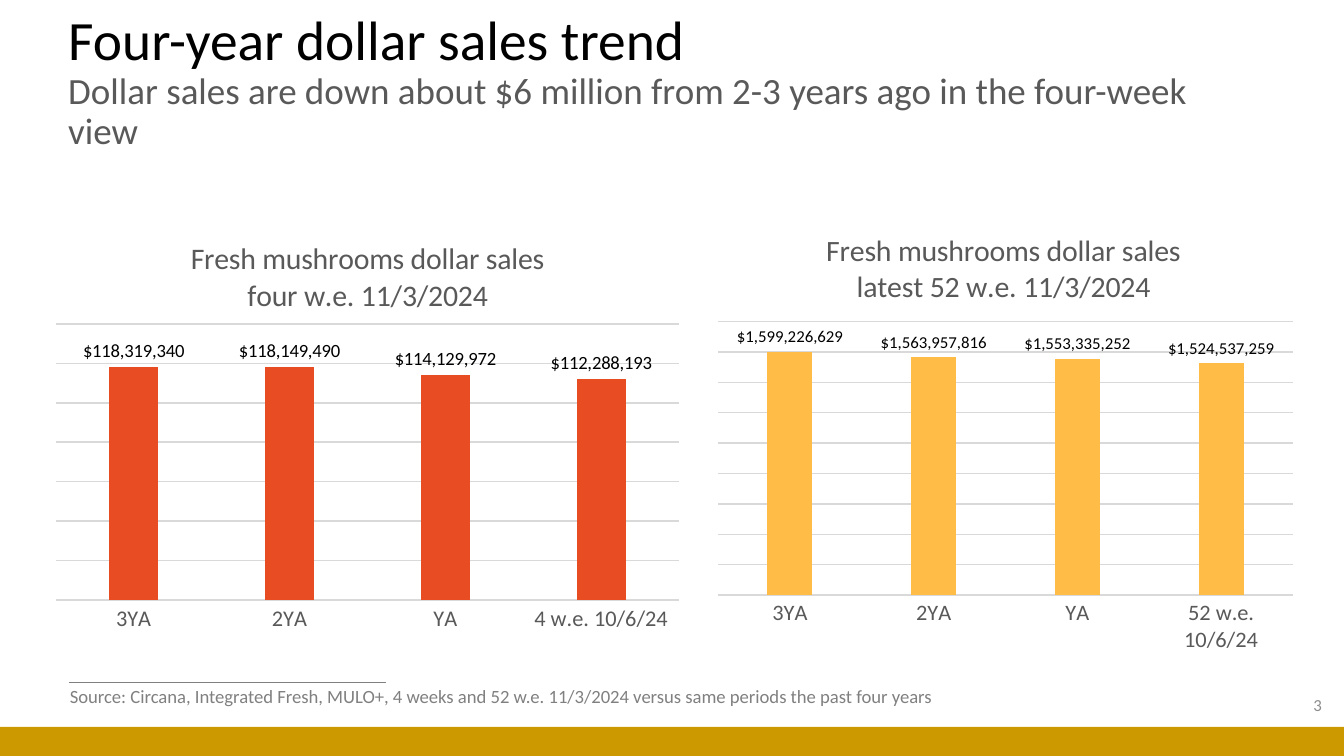
"""Build the four-year mushroom dollar sales slide."""
from dataclasses import dataclass

from lxml import etree
from pptx import Presentation
from pptx import util as u
from pptx.chart.data import CategoryChartData
from pptx.dml.color import RGBColor
from pptx.enum import chart as ch
from pptx.enum import shapes, text
from pptx.oxml.ns import qn


@dataclass(frozen=True)
class Theme:
    """Colours, type sizes and font of the slide."""
    font: str = "Calibri"
    black: str = "000000"
    dark: str = "595959"
    grey: str = "808080"
    light: str = "8C8C8C"
    grid: str = "D9D9D9"
    gold: str = "CC9900"
    red: str = "E84C22"
    amber: str = "FFBD47"
    heading: float = 29.7
    subheading: float = 19.8
    chart_title: float = 16
    axis: float = 12
    body: float = 10
    small: float = 9


class SlideBuilder:
    """Hold the style and the current slide, and add its elements."""

    def __init__(self, page, theme):
        self.page = page
        self.theme = theme

    def style(self, font, size, colour):
        for name, value in {"name": self.theme.font, "size": u.Pt(size), "bold": False}.items():
            setattr(font, name, value)
        font.color.rgb = RGBColor.from_string(colour)

    def stroke(self, line, colour, width):
        line.color.rgb = RGBColor.from_string(colour)
        line.width = u.Pt(width)

    def band(self, left, top, width, height, colour):
        band = self.page.shapes.add_shape(
            shapes.MSO_SHAPE.RECTANGLE, u.Cm(left), u.Cm(top), u.Cm(width), u.Cm(height))
        band.shadow.inherit = False
        band.fill.solid()
        band.fill.fore_color.rgb = RGBColor.from_string(colour)
        band.line.fill.background()

    def rule(self, left, right, top, colour, width):
        rule = self.page.shapes.add_connector(
            shapes.MSO_CONNECTOR.STRAIGHT, u.Cm(left), u.Cm(top), u.Cm(right), u.Cm(top))
        self.stroke(rule.line, colour, width)
        etree.SubElement(rule._element.spPr, qn("a:effectLst"))

    def label(self, left, top, width, height, lines, frame_format, para_format):
        box = self.page.shapes.add_textbox(u.Cm(left), u.Cm(top), u.Cm(width), u.Cm(height))
        para = box.text_frame.paragraphs[0]
        for target, values in ((box.text_frame, frame_format), (para, para_format)):
            for name, value in values.items():
                setattr(target, name, value)
        self.fill_lines(para, lines)

    def fill_lines(self, para, lines):
        for index, (words, size, colour) in enumerate(lines):
            if index:
                para.add_line_break()
            span = para.add_run()
            span.text = words
            self.style(span.font, size, colour)

    def place(self, parent, position, **values):
        for layout in parent.findall(qn("c:layout")):
            parent.remove(layout)
        layout = etree.Element(qn("c:layout"))
        manual = etree.SubElement(layout, qn("c:manualLayout"))
        for name, value in values.items():
            etree.SubElement(manual, qn(f"c:{name}"), val=str(value))
        parent.insert(position, layout)

    def columns(self, area, title, title_at, plot_at, categories, values, scale, colour, label_size):
        theme = self.theme
        data = CategoryChartData(number_format=r"\$#,##0")
        data.categories = categories
        data.add_series("Series 1", values)
        chart = self.page.shapes.add_chart(
            ch.XL_CHART_TYPE.COLUMN_CLUSTERED, *map(u.Cm, area), data).chart
        chart.has_legend = False
        self.style(chart.font, theme.body, theme.black)

        heading = chart.chart_title
        self.fill_lines(heading.text_frame.paragraphs[0],
                        [(words, theme.chart_title, theme.dark) for words in title])
        self.place(heading._element, 1, xMode="edge", yMode="edge", x=title_at[0], y=title_at[1])
        self.place(chart._chartSpace.chart.plotArea, 0, layoutTarget="inner",
                   xMode="edge", yMode="edge", **dict(zip("xywh", plot_at)))

        axis = chart.category_axis
        axis.major_tick_mark = ch.XL_TICK_MARK.NONE
        self.style(axis.tick_labels.font, theme.axis, theme.dark)
        self.stroke(axis.format.line, theme.grid, 0.75)

        top, step = scale
        axis_format = {"minimum_scale": 0, "maximum_scale": top, "major_unit": step,
                       "has_major_gridlines": True, "visible": False}
        for name, value in axis_format.items():
            setattr(chart.value_axis, name, value)
        self.stroke(chart.value_axis.major_gridlines.format.line, theme.grid, 0.75)

        plot = chart.plots[0]
        plot_format = {"gap_width": 219, "overlap": -27,
                       "vary_by_categories": False, "has_data_labels": True}
        for name, value in plot_format.items():
            setattr(plot, name, value)
        label_format = {"show_value": True, "position": ch.XL_LABEL_POSITION.OUTSIDE_END,
                        "number_format": r"\$#,##0", "number_format_is_linked": False}
        for name, value in label_format.items():
            setattr(plot.data_labels, name, value)
        self.style(plot.data_labels.font, label_size, theme.black)
        fill = plot.series[0].format.fill
        fill.solid()
        fill.fore_color.rgb = RGBColor.from_string(colour)


def main():
    theme = Theme()
    deck = Presentation()
    deck.slide_width, deck.slide_height = u.Cm(25.4), u.Cm(14.29)
    slide = SlideBuilder(deck.slides.add_slide(deck.slide_layouts[6]), theme)

    slide.rule(1.3, 7.29, 12.9, theme.grey, 0.5)
    slide.band(0, 13.74, 25.4, 0.55, theme.gold)

    middle = {"word_wrap": True, "vertical_anchor": text.MSO_ANCHOR.MIDDLE}
    slide.label(1.04, 0.56, 21.84, 2.01, [
        ("Four-year dollar sales trend", theme.heading, theme.black),
        ("Dollar sales are down about $6 million from 2-3 years ago in the four-week view",
         theme.subheading, theme.dark),
    ], middle, {"line_spacing": 0.9})
    slide.label(19.51, 12.95, 5.72, 0.76, [("3", theme.small, theme.light)],
                middle, {"alignment": text.PP_ALIGN.RIGHT})
    slide.label(1.07, 12.83, 17.15, 0.69, [
        ("Source: Circana, Integrated Fresh, MULO+, 4 weeks and 52 w.e. 11/3/2024 "
         "versus same periods the past four years", theme.body, theme.grey),
    ], {"word_wrap": False, "auto_size": text.MSO_AUTO_SIZE.SHAPE_TO_FIT_TEXT}, {})

    years = ["3YA", "2YA", "YA"]
    product = "Fresh mushrooms dollar sales"
    slide.columns((1.04, 3.94, 11.81, 8.41), [product, "four w.e. 11/3/2024"],
                  (0.21, 0.06), (0, 0.26, 1, 0.62), years + ["4 w.e. 10/6/24"],
                  (118319340, 118149490, 114129972, 112288193),
                  (140_000_000, 20_000_000), theme.red, theme.body)
    slide.columns((13.11, 4.14, 11.56, 8.2), [product, "latest 52 w.e. 11/3/2024"],
                  (0.21, 0.02), (0.04, 0.24, 0.94, 0.64), years + ["52 w.e. 10/6/24"],
                  (1599226629, 1563957816, 1553335252, 1524537259),
                  (1_800_000_000, 200_000_000), theme.amber, theme.small)

    deck.save("out.pptx")


if __name__ == "__main__":
    main()
